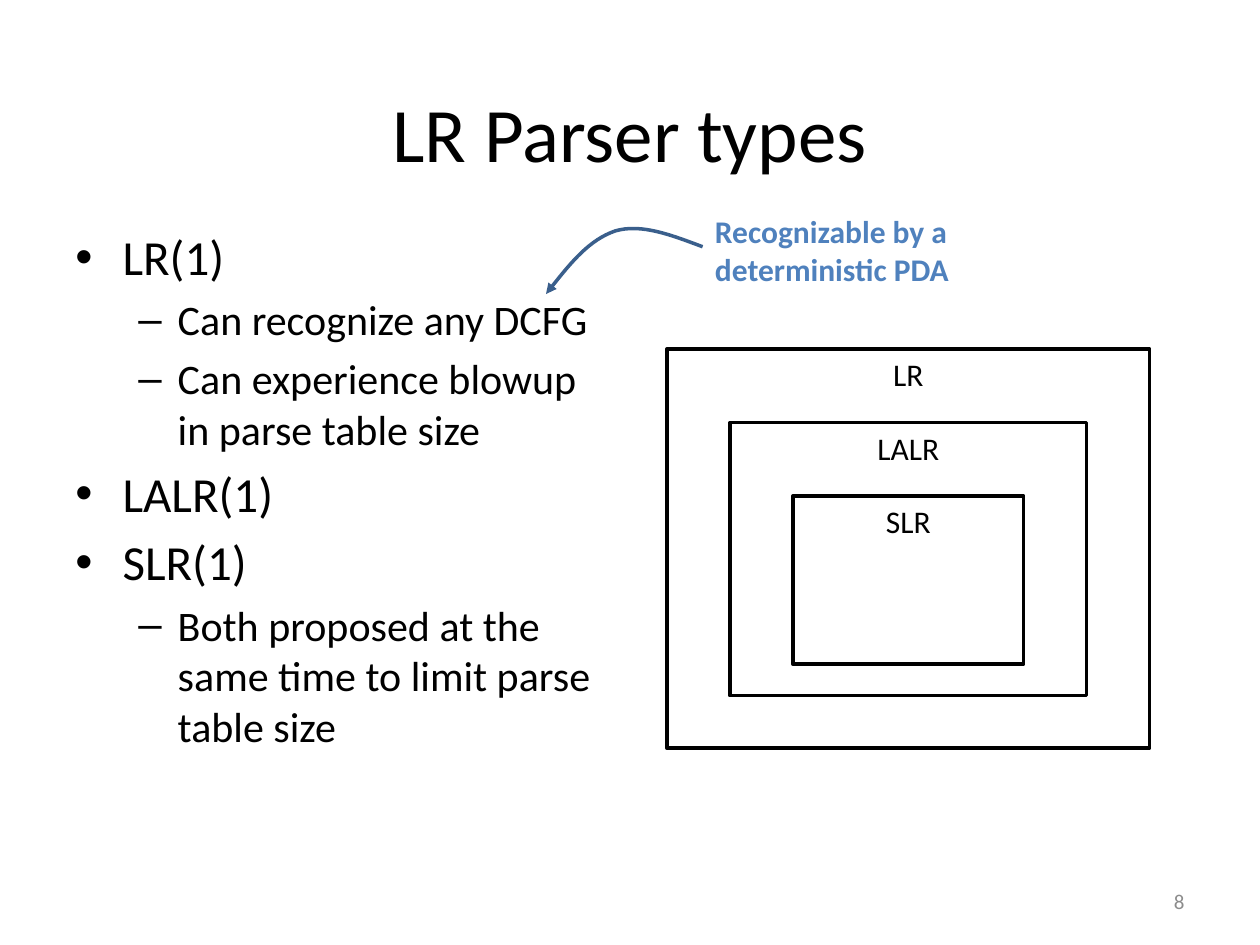
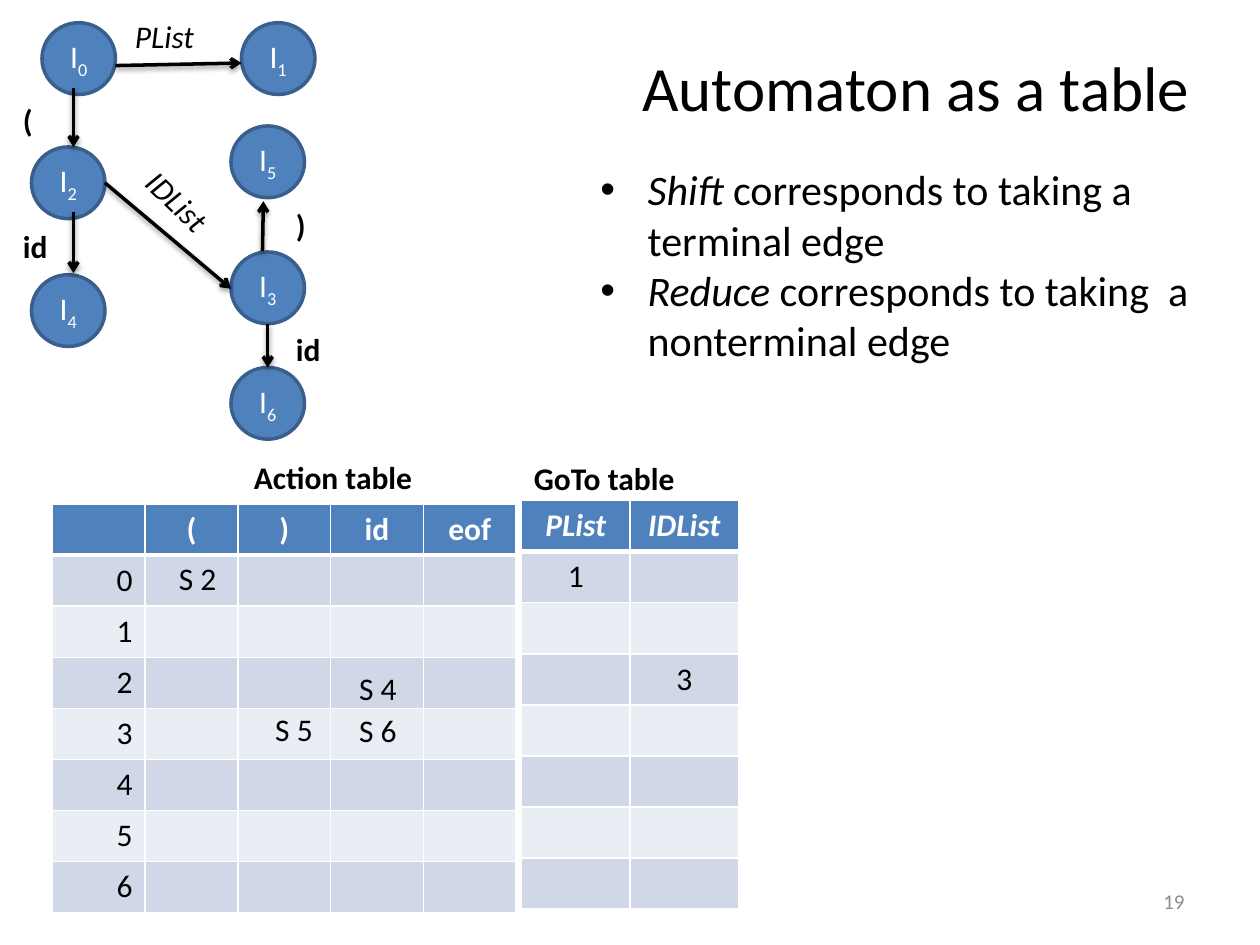
from pptx import Presentation
from pptx.dml.color import RGBColor
from pptx.enum.shapes import MSO_CONNECTOR, MSO_SHAPE
from pptx.enum.text import MSO_ANCHOR, PP_ALIGN
from pptx.oxml import parse_xml
from pptx.oxml.ns import nsdecls, qn
from pptx.util import Pt

COLORS = {
    "ink": "000000",
    "paper": "FFFFFF",
    "accent": "4F81BD",
    "accent_dark": "3A5F8C",
    "page_number": "8C8C8C",
    "band_dark": "D0D8E8",
    "band_light": "E9EDF4",
}
FONT = "Calibri"
LABEL_SIZE = 18
TITLE_BOX = (36, 30, 648, 90)
PAGE_NUMBER_BOX = (516, 500.5, 168, 28.8)
LEFT, CENTER, RIGHT = PP_ALIGN.LEFT, PP_ALIGN.CENTER, PP_ALIGN.RIGHT
ROW_HEIGHT = 29.2


def color(name):
    return RGBColor.from_string(COLORS[name])


def points(values):
    return [Pt(value) for value in values]


def add_span(para, text, size=LABEL_SIZE, ink="ink", bold=False, italic=False, subscript=False):
    span = para.add_run()
    span.text = text
    font = span.font
    font.name, font.size, font.bold, font.italic = FONT, Pt(size), bold, italic
    font.color.rgb = color(ink)
    if subscript:
        span._r.get_or_add_rPr().set("baseline", "-25000")


def next_para(frame, index):
    return frame.add_paragraph() if index else frame.paragraphs[0]


def add_frame(page, box, wrap=True, anchor=MSO_ANCHOR.TOP):
    frame = page.shapes.add_textbox(*points(box)).text_frame
    frame.word_wrap = wrap
    frame.vertical_anchor = anchor
    return frame


def add_label(page, box, text, align=LEFT, turn=0, **style):
    """One unwrapped paragraph per line of text."""
    frame = add_frame(page, box, wrap=False)
    for index, line in enumerate(text.split("\n")):
        para = next_para(frame, index)
        para.alignment = align
        add_span(para, line, **style)
    frame._parent.rotation = turn


def add_page_number(page, number):
    para = add_frame(page, PAGE_NUMBER_BOX, anchor=MSO_ANCHOR.MIDDLE).paragraphs[0]
    para.alignment = RIGHT
    add_span(para, str(number), size=12, ink="page_number")


def set_bullet(para, mark, margin, hang):
    properties = para._p.get_or_add_pPr()
    properties.set("marL", str(Pt(margin)))
    properties.set("indent", str(-Pt(hang)))
    properties.append(parse_xml(f'<a:buFont {nsdecls("a")} typeface="Arial"/>'))
    properties.append(parse_xml(f'<a:buChar {nsdecls("a")} char="{mark}"/>'))


def add_shape(page, kind, box, fill, line):
    shape = page.shapes.add_shape(kind, *points(box))
    shape.shadow.inherit = False
    shape.fill.solid()
    shape.fill.fore_color.rgb = color(fill)
    shape.line.color.rgb = color(line)
    shape.line.width = Pt(2)
    para = shape.text_frame.paragraphs[0]
    para.alignment = CENTER
    return shape, para


def style_arrow(shape, ink, head):
    shape.line.color.rgb = color(ink)
    shape.line.width = Pt(2)
    outline = shape.element.spPr.find(qn("a:ln"))
    outline.append(parse_xml(f'<a:tailEnd {nsdecls("a")} type="{head}"/>'))


# Parser types

PARSER_POINTS = [
    (0, "LR(1)"),
    (1, "Can recognize any DCFG"),
    (1, "Can experience blowup in parse table size"),
    (0, "LALR(1)"),
    (0, "SLR(1)"),
    (1, "Both proposed at the same time to limit parse table size"),
]
POINT_LEVELS = [("•", 27, 27, 28), ("–", 58.5, 22.5, 24)]  # mark, margin, hang, size
PARSER_CLASSES = [("LR", 276, 228), ("LALR", 204, 156), ("SLR", 132, 96)]
CLASS_STEP = (36, 42)


def add_parser_points(page, box):
    frame = add_frame(page, box)
    for index, (level, text) in enumerate(PARSER_POINTS):
        mark, margin, hang, size = POINT_LEVELS[level]
        para = next_para(frame, index)
        para.space_before = Pt(size * 0.2)
        set_bullet(para, mark, margin, hang)
        add_span(para, text, size=size)


def add_nested_classes(page, left, top):
    step_x, step_y = CLASS_STEP
    for depth, (name, width, height) in enumerate(PARSER_CLASSES):
        box = (left + depth * step_x, top + depth * step_y, width, height)
        shape, para = add_shape(page, MSO_SHAPE.RECTANGLE, box, "paper", "ink")
        shape.text_frame.vertical_anchor = MSO_ANCHOR.TOP
        add_span(para, name)


def add_curved_arrow(page, start, controls):
    """Cubic curve: every three control points make one segment."""
    builder = page.shapes.build_freeform(*points(start))
    builder.add_line_segments([points(control) for control in controls], close=False)
    curve = builder.convert_to_shape()
    curve.shadow.inherit = False
    curve.fill.background()
    segments = list(curve.element.iter(qn("a:lnTo")))
    for first in range(0, len(segments), 3):
        bend = parse_xml(f'<a:cubicBezTo {nsdecls("a")}/>')
        segments[first].addprevious(bend)
        for segment in segments[first:first + 3]:
            bend.append(segment[0])
            segment.getparent().remove(segment)
    style_arrow(curve, "accent_dark", "triangle")


def add_pda_note(page, left, top):
    offsets = [(-17.5, 17), (-35, 10), (-50, 14.5), (-64.5, 19.5), (-77, 34.5), (-89.5, 50.5)]
    add_curved_arrow(page, (left, top + 23.5), [(left + x, top + y) for x, y in offsets])
    add_label(page, (left, top, 149, 51), "Recognizable by a\ndeterministic PDA",
              ink="accent", bold=True)


def build_parser_types(page):
    title = add_frame(page, TITLE_BOX, anchor=MSO_ANCHOR.MIDDLE).paragraphs[0]
    title.alignment = CENTER
    add_span(title, "LR Parser types", size=44)
    add_parser_points(page, (36, 126, 318, 356))
    add_page_number(page, 8)
    add_nested_classes(page, 381, 199.5)
    add_pda_note(page, 401.5, 117.5)


# Automaton

STATES = {"0": (24, 13), "1": (138, 13), "2": (18, 84), "4": (18, 157),
          "3": (132, 144), "6": (132, 210), "5": (132, 72)}
STATE_SIZE = (42, 41)
EDGES = [  # from, to
    ((66, 37.5), (138, 36)),
    ((42, 50.5), (42, 84)),
    ((42, 121), (42, 156)),
    ((60, 104.5), (132, 165)),
    ((150, 143.5), (150.5, 115)),
    ((153, 185), (153, 210)),
]
EDGE_LABELS = [  # text, left, top, width, turn, style
    ("PList", 70, 6, 49, 0, {"italic": True}),
    ("(", 6, 54, 20, 0, {"bold": True}),
    ("id", 6, 126, 29, 0, {"bold": True}),
    ("IDList", 74, 101, 55.5, 43.7, {"italic": True}),
    (")", 162, 114, 20, 0, {"bold": True}),
    ("id", 162, 185, 29, 0, {"bold": True}),
]
EDGE_SHADOW = (
    f'<a:effectLst {nsdecls("a")}><a:outerShdw blurRad="{Pt(3.1)}" dist="{Pt(1.6)}" '
    f'dir="5400000" rotWithShape="0"><a:srgbClr val="{COLORS["ink"]}">'
    '<a:alpha val="38000"/></a:srgbClr></a:outerShdw></a:effectLst>'
)
EDGE_MEANINGS = [
    ("Shift ", "corresponds to taking a terminal edge"),
    ("Reduce", " corresponds to taking  a nonterminal edge"),
]
SHIFTS = [("S 2", 95, 316), ("S 4", 198, 379), ("S 6", 198, 403), ("S 5", 150, 402)]


def add_automaton(page, left, top):
    for number, (x, y) in STATES.items():
        box = (left + x, top + y, *STATE_SIZE)
        shape, para = add_shape(page, MSO_SHAPE.OVAL, box, "accent", "accent_dark")
        shape.text_frame.vertical_anchor = MSO_ANCHOR.MIDDLE
        add_span(para, "I", ink="paper")
        add_span(para, number, ink="paper", subscript=True)
    for (x1, y1), (x2, y2) in EDGES:
        ends = points((left + x1, top + y1, left + x2, top + y2))
        edge = page.shapes.add_connector(MSO_CONNECTOR.STRAIGHT, *ends)
        style_arrow(edge, "ink", "arrow")
        edge.element.spPr.append(parse_xml(EDGE_SHADOW))
    for text, x, y, width, turn, style in EDGE_LABELS:
        add_label(page, (left + x, top + y, width, 29), text, turn=turn, **style)


def add_edge_meanings(page, box):
    frame = add_frame(page, box)
    for index, (term, meaning) in enumerate(EDGE_MEANINGS):
        para = next_para(frame, index)
        set_bullet(para, "•", 63, 27)
        add_span(para, term, size=24, italic=True)
        add_span(para, meaning, size=24)


def style_cell(cell, row):
    """White rules, heavier under the header, and alternating bands."""
    heavy_side = {0: "B", 1: "T"}.get(row)
    properties = cell._tc.get_or_add_tcPr()
    for side in "LRTB":
        width = Pt(3 if side == heavy_side else 1)
        properties.append(parse_xml(
            f'<a:ln{side} {nsdecls("a")} w="{width}"><a:solidFill>'
            f'<a:srgbClr val="{COLORS["paper"]}"/></a:solidFill></a:ln{side}>'))
    cell.fill.solid()
    band = "band_dark" if row % 2 else "band_light"
    cell.fill.fore_color.rgb = color(band if row else "accent")


def add_state_table(page, left, top, column_width, rows, align, italic_header=False):
    columns = len(rows[0])
    box = (left, top, column_width * columns, ROW_HEIGHT * len(rows))
    table = page.shapes.add_table(len(rows), columns, *points(box)).table
    for column in table.columns:
        column.width = Pt(column_width)
    for row, texts in enumerate(rows):
        table.rows[row].height = Pt(ROW_HEIGHT)
        for column, text in enumerate(texts):
            cell = table.cell(row, column)
            style_cell(cell, row)
            if text:
                para = cell.text_frame.paragraphs[0]
                para.alignment = align if row else CENTER
                add_span(para, text, ink="ink" if row else "paper",
                         bold=row == 0, italic=italic_header and row == 0)


def add_action_table(page, left, top):
    rows = [["", "(", ")", "id", "eof"]]
    rows += [[str(state), "", "", "", ""] for state in range(len(STATES))]
    add_state_table(page, left, top, 53, rows, RIGHT)
    for text, x, y in SHIFTS:
        add_label(page, (x, y, 36, 29), text, align=CENTER)
    add_label(page, (left + 108, top - 30, 106, 29), "Action table", bold=True)


def add_goto_table(page, left, top):
    targets = {0: ["1", ""], 2: ["", "3"]}
    rows = [["PList", "IDList"]]
    rows += [targets.get(state, ["", ""]) for state in range(len(STATES))]
    add_state_table(page, left, top, 62, rows, CENTER, italic_header=True)
    add_label(page, (left, top - 27, 96, 29), "GoTo table", bold=True)


def build_automaton_table(page):
    add_automaton(page, 0, 0)
    add_label(page, (360, 24, 330, 51), "Automaton as a table", size=36)
    add_edge_meanings(page, (300, 90, 408, 124))
    add_action_table(page, 30, 288)
    add_goto_table(page, 298, 286)
    add_page_number(page, 19)


def main():
    deck = Presentation()
    deck.slide_width, deck.slide_height = Pt(720), Pt(540)
    for build in (build_parser_types, build_automaton_table):
        build(deck.slides.add_slide(deck.slide_layouts[6]))
    deck.save("out.pptx")


if __name__ == "__main__":
    main()
